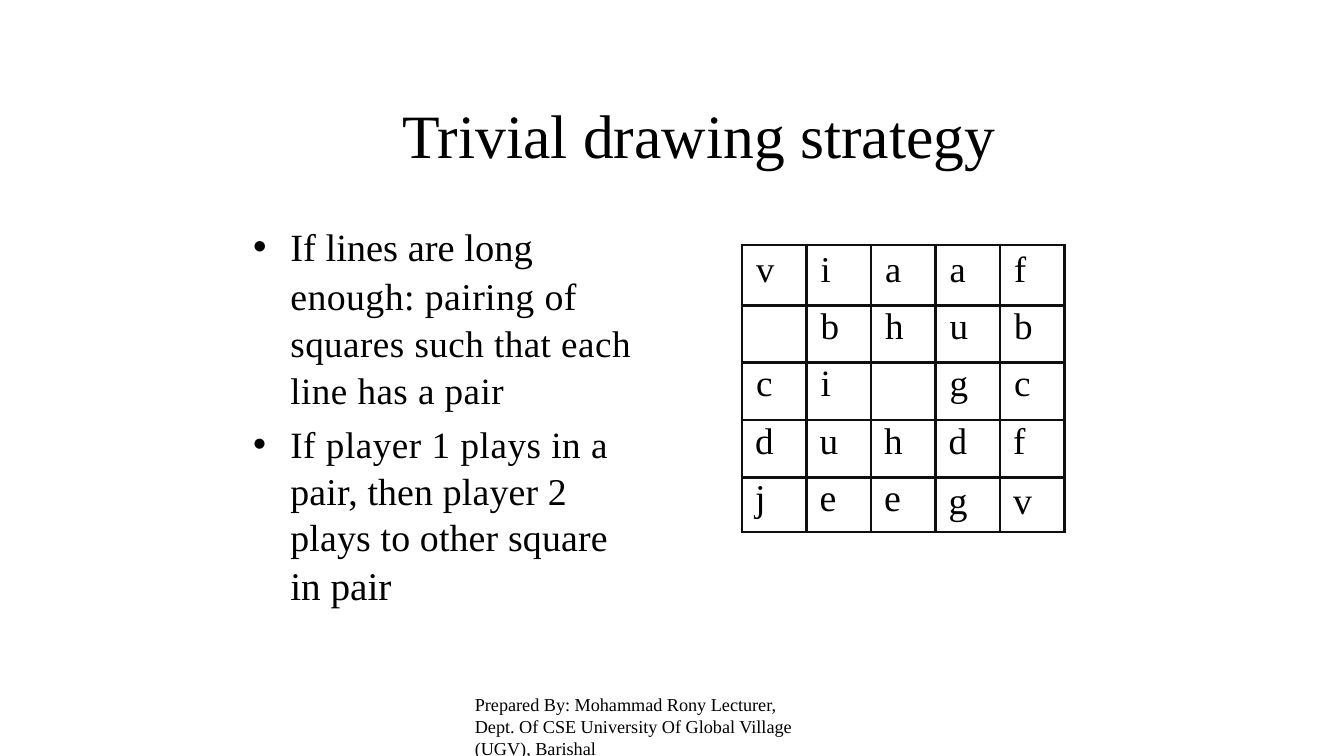
from lxml.etree import SubElement
from pptx import Presentation
from pptx.dml.color import RGBColor
from pptx.enum.text import MSO_ANCHOR as Anchor, MSO_AUTO_SIZE as AutoSize, PP_ALIGN as Align
from pptx.oxml.ns import qn
from pptx.util import Emu, Inches, Pt

INK = RGBColor(0x00, 0x00, 0x00)
GRID = RGBColor(0x0F, 0x0F, 0x0F)
FONT = "Times New Roman"

# Boxes: left, top, width, height in inches
TITLE_BOX = (2.79, 0.52, 10.54, 1.14)
BODY_BOX = (2.5, 2.19, 3.85, 3.86)
BOARD_BOX = (7.36, 2.43, 3.2, 2.85)
CREDIT_BOX = (4.7, 6.88, 3.26, 0.22)

# Paragraphs: bulleted, line spacing, space before, spans of (text, size, tracking)
STRATEGY = [
    (True, 1.0, 0, [("If lines are long", 27.5, 0)]),
    (False, Pt(33.4), 1.6, [("enough: pairing of ", 27, 0.3),
                            ("squares such that each line has a pair", 26.5, 0.35)]),
    (True, 1.03, 6.2, [("If player 1 plays in a ", 26.5, 0.4),
                       ("pair, then player 2 plays to other square ", 27, 0.15),
                       ("in pair", 28, 0)]),
]

# Board rows: letters, share of height, size, top inset, left inset
BOARD = [
    ("viaaf", 0.21, 26, 0.05, 0.14),
    (" bhub", 0.2, 26.5, 0.01, 0.14),
    ("ci gc", 0.2, 26.5, 0.01, 0.14),
    ("duhdf", 0.2, 26.5, 0.01, 0.13),
    ("jeegv", 0.19, 27, 0, 0.13),
]


def style(font, size=None):
    font.name = FONT
    font.color.rgb = INK
    if size:
        font.size = Pt(size)


def place(shape, box):
    shape.left, shape.top, shape.width, shape.height = map(Inches, box)


def prepare(frame, left=0, top=0):
    frame.word_wrap = True
    frame.auto_size = AutoSize.NONE
    frame.vertical_anchor = Anchor.TOP
    frame.margin_left, frame.margin_top = Inches(left), Inches(top)
    frame.margin_right = frame.margin_bottom = 0


def add_title(page, box):
    title = page.shapes.title
    place(title, box)
    prepare(title.text_frame, left=1.2, top=0.44)
    para = title.text_frame.paragraphs[0]
    para.text = "Trivial drawing strategy"
    para.alignment = Align.LEFT
    style(para.font, 44)


def add_strategy(page, box):
    body = page.placeholders[1]
    place(body, box)
    frame = body.text_frame
    prepare(frame, top=0.02)
    for index, (bulleted, spacing, before, spans) in enumerate(STRATEGY):
        para = frame.paragraphs[0] if index == 0 else frame.add_paragraph()
        para.alignment = Align.LEFT
        para.line_spacing = spacing
        para.space_before = Pt(before)
        props = para._p.get_or_add_pPr()
        props.set("marL", str(Inches(0.38)))
        props.set("indent", str(Inches(-0.37 if bulleted else 0)))
        if bulleted:
            SubElement(props, qn("a:buChar")).set("char", "•")
        else:
            SubElement(props, qn("a:buNone"))
        style(para.font)
        for text, size, tracking in spans:
            span = para.add_run()
            span.text = text
            span.font.size = Pt(size)
            span.font._element.set("spc", str(round(tracking * 100)))


def outline(cell):
    props = cell._tc.get_or_add_tcPr()
    for side in ("lnL", "lnR", "lnT", "lnB"):
        line = SubElement(props, qn(f"a:{side}"))
        line.set("w", str(Pt(2.25)))
        fill = SubElement(line, qn("a:solidFill"))
        SubElement(fill, qn("a:srgbClr")).set("val", str(GRID))


def add_board(page, box):
    left, top, width, height = map(Inches, box)
    count = len(BOARD)
    table = page.shapes.add_table(count, count, left, top, width, height).table
    table.first_row = table.horz_banding = False
    for column in table.columns:
        column.width = Emu(width // count)
    for row, (letters, share, size, inset, indent) in enumerate(BOARD):
        table.rows[row].height = Emu(round(height * share))
        for column, letter in enumerate(letters):
            cell = table.cell(row, column)
            outline(cell)
            cell.fill.background()
            cell.margin_left, cell.margin_top = Inches(indent), Inches(inset)
            cell.margin_right = cell.margin_bottom = 0
            if letter != " ":
                para = cell.text_frame.paragraphs[0]
                para.text = letter
                if letter in "gv" and row == count - 1:
                    para.line_spacing = Pt(32.2)
                style(para.font, size)


def add_credit(page, box):
    frame = page.shapes.add_textbox(*map(Inches, box)).text_frame
    prepare(frame, left=0.01)
    para = frame.paragraphs[0]
    para.text = ("Prepared By: Mohammad Rony Lecturer, Dept. Of CSE "
                 "University Of Global Village (UGV), Barishal")
    style(para.font, 13)


def main():
    deck = Presentation()
    deck.slide_width, deck.slide_height = Inches(13.33), Inches(7.5)
    page = deck.slides.add_slide(deck.slide_layouts[1])
    add_board(page, BOARD_BOX)
    add_title(page, TITLE_BOX)
    add_strategy(page, BODY_BOX)
    add_credit(page, CREDIT_BOX)
    deck.save("out.pptx")


if __name__ == "__main__":
    main()
